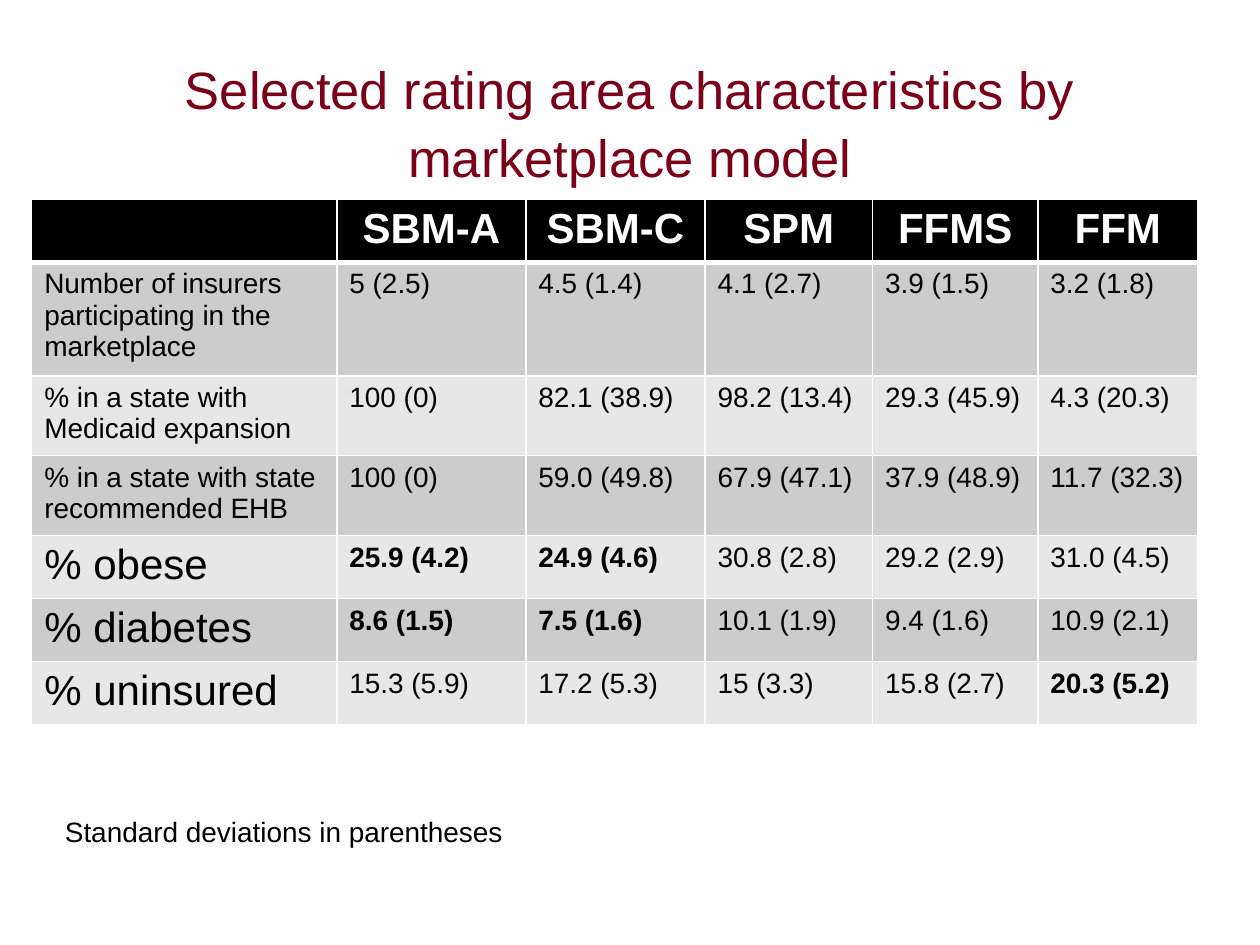
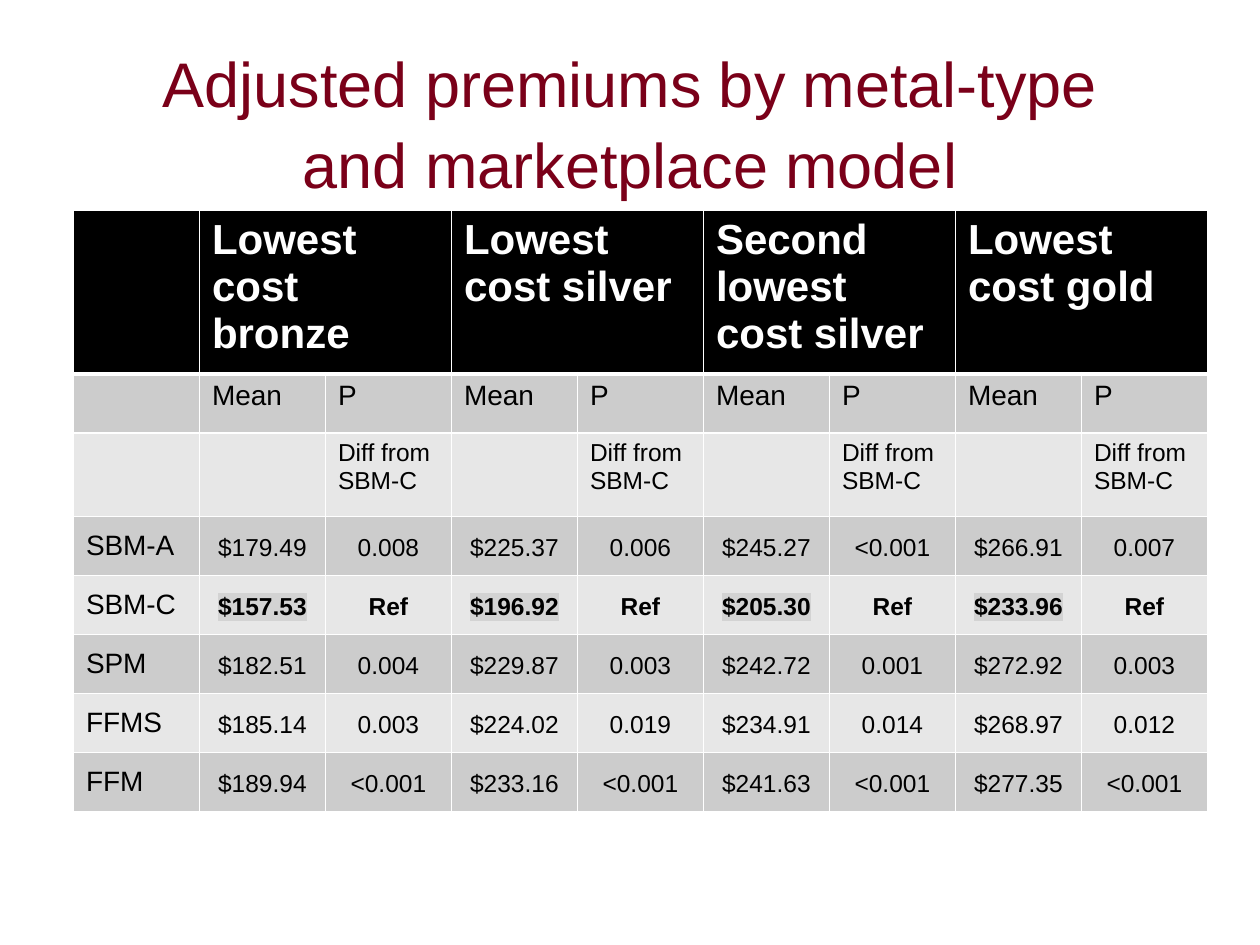
from lxml.etree import SubElement
from pptx import Presentation
from pptx.dml.color import RGBColor
from pptx.enum.text import MSO_ANCHOR as Anchor, PP_ALIGN as Align
from pptx.oxml import parse_xml
from pptx.oxml.ns import nsdecls, qn
from pptx.util import Cm, Pt

MAROON = RGBColor(0x7A, 0x00, 0x19)
BLACK = RGBColor(0x00, 0x00, 0x00)
WHITE = RGBColor(0xFF, 0xFF, 0xFF)
DARK_BAND = RGBColor(0xCC, 0xCC, 0xCC)
LIGHT_BAND = RGBColor(0xE7, 0xE7, 0xE7)
HIGHLIGHT = RGBColor(0xD3, 0xD3, 0xD3)
FONT = "Arial"

AREA_TITLE = "Selected rating area characteristics by marketplace model"
AREA_ROWS = [
    ["", "SBM-A", "SBM-C", "SPM", "FFMS", "FFM"],
    ["Number of insurers participating in the marketplace",
     "5 (2.5)", "4.5 (1.4)", "4.1 (2.7)", "3.9 (1.5)", "3.2 (1.8)"],
    ["% in a state with Medicaid expansion",
     "100 (0)", "82.1 (38.9)", "98.2 (13.4)", "29.3 (45.9)", "4.3 (20.3)"],
    ["% in a state with state recommended EHB",
     "100 (0)", "59.0 (49.8)", "67.9 (47.1)", "37.9 (48.9)", "11.7 (32.3)"],
    ["% obese", "25.9 (4.2)", "24.9 (4.6)", "30.8 (2.8)", "29.2 (2.9)", "31.0 (4.5)"],
    ["% diabetes", "8.6 (1.5)", "7.5 (1.6)", "10.1 (1.9)", "9.4 (1.6)", "10.9 (2.1)"],
    ["% uninsured", "15.3 (5.9)", "17.2 (5.3)", "15 (3.3)", "15.8 (2.7)", "20.3 (5.2)"],
]
AREA_BOLD = {(4, 1), (4, 2), (5, 1), (5, 2), (6, 5)}
AREA_WIDTHS = [6.15, 3.81, 3.61, 3.38, 3.33, 3.23]
AREA_HEIGHTS = [1.19, 2.26, 1.6, 1.6, 1.19, 1.19, 1.19]
AREA_FIRST_LARGE_LABEL = 4
AREA_NOTE = "Standard deviations in parentheses"

PREMIUM_TITLE = "Adjusted premiums by metal-type and marketplace model"
PLANS = ["Lowest cost bronze", "Lowest cost silver",
         "Second lowest cost silver", "Lowest cost gold"]
PREMIUMS = [
    ["SBM-A", "$179.49", "0.008", "$225.37", "0.006", "$245.27", "<0.001", "$266.91", "0.007"],
    ["SBM-C", "$157.53", "Ref", "$196.92", "Ref", "$205.30", "Ref", "$233.96", "Ref"],
    ["SPM", "$182.51", "0.004", "$229.87", "0.003", "$242.72", "0.001", "$272.92", "0.003"],
    ["FFMS", "$185.14", "0.003", "$224.02", "0.019", "$234.91", "0.014", "$268.97", "0.012"],
    ["FFM", "$189.94", "<0.001", "$233.16", "<0.001", "$241.63", "<0.001", "$277.35", "<0.001"],
]
PREMIUM_ROWS = [
    [""] + [text for plan in PLANS for text in (plan, "")],
    [""] + ["Mean", "P"] * len(PLANS),
    [""] + ["", "Diff from SBM-C"] * len(PLANS),
] + PREMIUMS
REFERENCE_MODEL = "SBM-C"
PREMIUM_WIDTHS = [2.54] * 9
PREMIUM_HEIGHTS = [2.97, 1.19, 1.68] + [1.19] * len(PREMIUMS)
FIRST_PREMIUM_ROW = 3


def add_run(paragraph, text, size, color=BLACK, bold=False):
    run = paragraph.add_run()
    run.text = text
    run.font.name = FONT
    run.font.size = Pt(size)
    run.font.bold = bold
    run.font.color.rgb = color
    return run


def highlight(run):
    fill = run.font._element.find(qn("a:solidFill"))
    fill.addnext(parse_xml(
        f'<a:highlight {nsdecls("a")}><a:srgbClr val="{HIGHLIGHT}"/></a:highlight>'))


def add_title(slide, text, size):
    frame = slide.shapes.add_textbox(Cm(1.9), Cm(0.84), Cm(21.6), Cm(3.18)).text_frame
    frame.word_wrap = True
    frame.vertical_anchor = Anchor.MIDDLE
    paragraph = frame.paragraphs[0]
    paragraph.alignment = Align.CENTER
    paragraph.line_spacing = 1.07
    add_run(paragraph, text, size, MAROON)


def set_borders(cell, top, bottom):
    properties = cell._tc.get_or_add_tcPr()
    widths = {"lnL": 1, "lnR": 1, "lnT": top, "lnB": bottom}
    for position, (side, width) in enumerate(widths.items()):
        line = parse_xml(f'<a:{side} {nsdecls("a")} w="{Pt(width)}"/>')
        fill = SubElement(line, qn("a:solidFill"))
        SubElement(fill, qn("a:srgbClr")).set("val", str(WHITE))
        properties.insert(position, line)


def add_banded_table(slide, left, top, widths, heights):
    table = slide.shapes.add_table(
        len(heights), len(widths), Cm(left), Cm(top),
        Cm(sum(widths)), Cm(sum(heights))).table
    for column, width in zip(table.columns, widths):
        column.width = Cm(width)
    for index, (row, height) in enumerate(zip(table.rows, heights)):
        row.height = Cm(height)
        for cell in row.cells:
            cell.fill.solid()
            band = DARK_BAND if index % 2 else LIGHT_BAND
            cell.fill.fore_color.rgb = band if index else BLACK
            set_borders(cell, 3 if index == 1 else 1, 1 if index else 3)
    return table


def filled_cells(table, rows):
    for row, texts in enumerate(rows):
        for column, text in enumerate(texts):
            if text:
                cell = table.cell(row, column)
                yield row, column, text, cell, cell.text_frame.paragraphs[0]


def build_area_slide(slide):
    add_title(slide, AREA_TITLE, 30)
    table = add_banded_table(slide, 0.64, 4.02, AREA_WIDTHS, AREA_HEIGHTS)
    for row, column, text, cell, paragraph in filled_cells(table, AREA_ROWS):
        if row == 0:
            paragraph.alignment = Align.CENTER
            add_run(paragraph, text, 24, WHITE, True)
        else:
            large = column == 0 and row >= AREA_FIRST_LARGE_LABEL
            add_run(paragraph, text, 24 if large else 16, bold=(row, column) in AREA_BOLD)
    note = slide.shapes.add_textbox(Cm(1.06), Cm(16.3), Cm(9.45), Cm(0.94)).text_frame
    note.word_wrap = False
    add_run(note.paragraphs[0], AREA_NOTE, 16)


def build_premium_slide(slide):
    add_title(slide, PREMIUM_TITLE, 36)
    table = add_banded_table(slide, 1.48, 4.24, PREMIUM_WIDTHS, PREMIUM_HEIGHTS)
    for column in range(1, len(PREMIUM_WIDTHS), 2):
        table.cell(0, column).merge(table.cell(0, column + 1))
    for row, column, text, cell, paragraph in filled_cells(table, PREMIUM_ROWS):
        if row == 0:
            add_run(paragraph, text, 24, WHITE, True)
        elif row < FIRST_PREMIUM_ROW:
            add_run(paragraph, text, 16 if row == 1 else 14)
        else:
            cell.vertical_anchor = Anchor.MIDDLE
            if column == 0:
                add_run(paragraph, text, 16)
                continue
            cell.margin_left = cell.margin_right = Cm(0.18)
            cell.margin_top = cell.margin_bottom = 0
            paragraph.alignment = Align.CENTER
            paragraph.line_spacing = 1.15
            reference = PREMIUM_ROWS[row][0] == REFERENCE_MODEL
            run = add_run(paragraph, text, 14, bold=reference)
            if reference and column % 2:
                highlight(run)


def main():
    presentation = Presentation()
    presentation.slide_width = Cm(25.4)
    presentation.slide_height = Cm(19.05)
    blank = presentation.slide_layouts[6]
    for build in (build_area_slide, build_premium_slide):
        build(presentation.slides.add_slide(blank))
    presentation.save("out.pptx")


if __name__ == "__main__":
    main()
